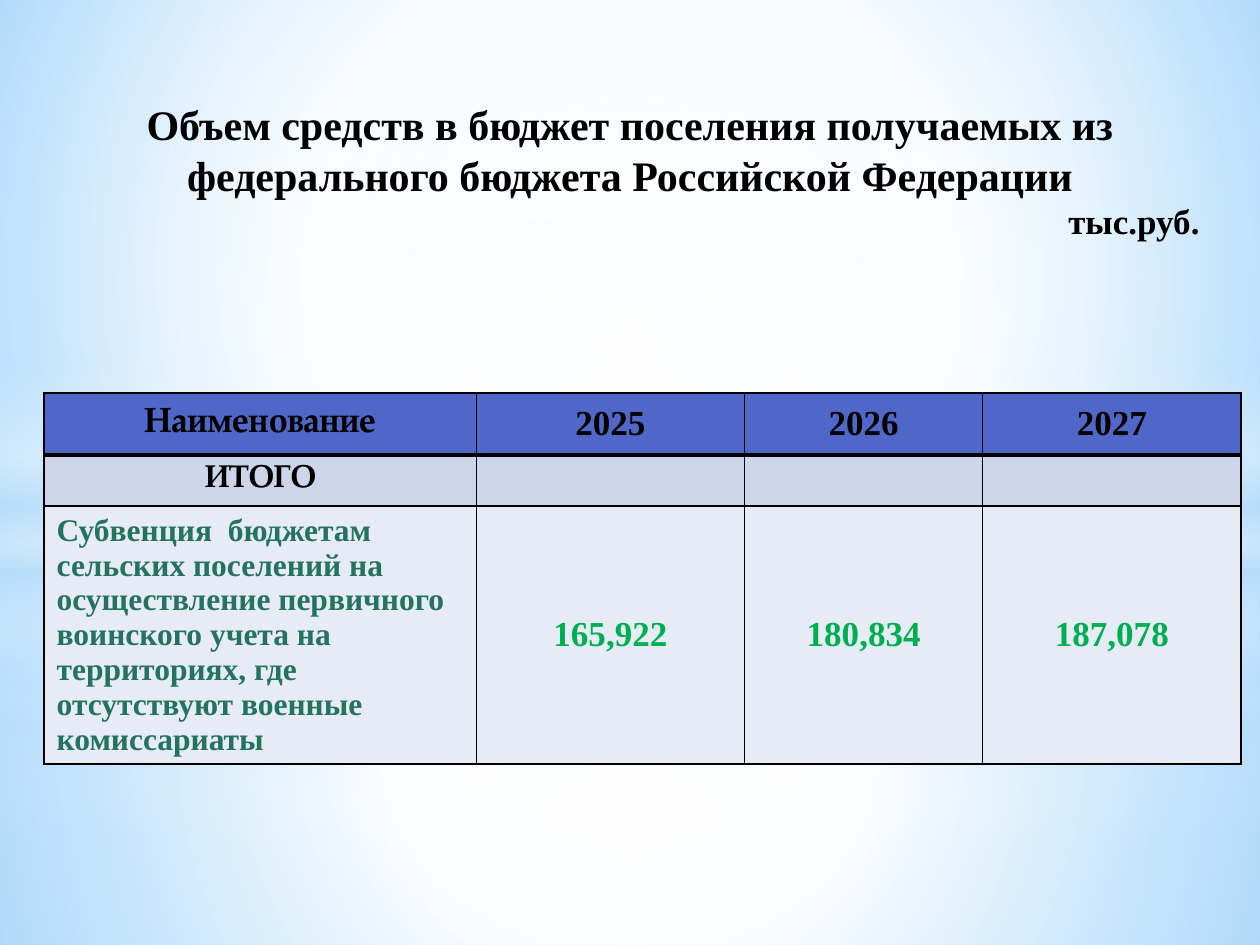
from dataclasses import dataclass

from lxml import etree
from pptx import Presentation
from pptx.dml.color import RGBColor
from pptx.enum import shapes, text
from pptx.oxml import ns
from pptx.util import Inches, Pt


@dataclass(frozen=True)
class Theme:
    serif: str = "Times New Roman"
    label: str = "TeX Gyre Pagella"
    ink: str = "000000"
    white: str = "FFFFFF"
    sky: str = "B4DCFA"
    bg_inner: str = "9ED5FF"
    bg_outer: str = "5BB9FF"
    header: str = "4E67C8"
    total: str = "CCD5EA"
    body: str = "E7EBF5"
    item: str = "23735D"
    amount: str = "00B050"
    title_size: int = 24
    large: int = 20
    normal: int = 18


THEME = Theme()
CENTER = text.PP_ALIGN.CENTER


def add_child(parent, tag, **attributes):
    child = etree.SubElement(parent, ns.qn(tag))
    for name, value in attributes.items():
        child.set(name, str(value))
    return child


def paint_gradient(holder, stops, focus=None):
    """Replace the solid fill in holder; stops are (percent, colour, opacity).

    focus gives the left, top, right and bottom insets of a circular gradient;
    without it the gradient runs downwards.
    """
    solid = holder.find(ns.qn("a:solidFill"))
    gradient = etree.Element(ns.qn("a:gradFill"), rotWithShape="1")
    stop_list = add_child(gradient, "a:gsLst")
    for position, colour, opacity in stops:
        stop = add_child(stop_list, "a:gs", pos=position * 1000)
        tint = add_child(stop, "a:srgbClr", val=colour)
        if opacity < 100:
            add_child(tint, "a:alpha", val=opacity * 1000)
    if focus:
        circle = add_child(gradient, "a:path", path="circle")
        insets = {side: inset * 1000 for side, inset in zip("ltrb", focus)}
        add_child(circle, "a:fillToRect", **insets)
    else:
        add_child(gradient, "a:lin", ang=90 * 60000, scaled=0)
    holder.replace(solid, gradient)


def add_wash(page, box, stops, focus=(50, 50, 50, 50), kind=shapes.MSO_SHAPE.RECTANGLE):
    wash = page.shapes.add_shape(kind, *map(Inches, box))
    wash.shadow.inherit = False
    wash.line.fill.background()
    wash.fill.solid()
    paint_gradient(wash._element.spPr, stops, focus)


def add_horizon(page, horizon, band_top, extra, glow_end):
    """Draw ground, sky, a misty band and a glow; extra adds to the opacity."""
    white, sky = THEME.white, THEME.sky
    add_wash(page, (0, horizon, 10, 7.5 - horizon),
             [(0, white, 91 + extra), (37, white, 76 + extra), (100, sky, 79 + extra)])
    add_wash(page, (0, 0, 10, horizon),
             [(0, white, 89 + extra), (48, white, 62 + extra), (100, sky, 79 + extra)])
    add_wash(page, (0, band_top, 10, 2.5),
             [(0, white, 0), (29, white, 30), (45, sky, 40),
              (55, white, 26), (65, sky, 60), (100, white, 0)], focus=None)
    add_wash(page, (0, 1.75, 10, 5.58), [(0, white, 100), (glow_end, white, 0)],
             kind=shapes.MSO_SHAPE.OVAL)


def add_backdrop(page):
    page.background.fill.solid()
    paint_gradient(page._element.cSld.bg.bgPr,
                   [(0, THEME.bg_inner, 100), (60, THEME.white, 100), (100, THEME.bg_outer, 100)],
                   focus=(20, 10, 20, 60))
    add_horizon(page, 5.58, 4.12, extra=0, glow_end=56)
    add_horizon(page, 4.23, 2.9, extra=1, glow_end=54)


def write(para, words, size=THEME.large, font=THEME.serif, colour=THEME.ink, align=CENTER):
    para.alignment = align
    span = para.add_run()
    span.text = words
    span.font.size = Pt(size)
    span.font.name = font
    span.font.bold = True
    span.font.color.rgb = RGBColor.from_string(colour)


def add_title(page, box):
    frame = page.shapes.add_textbox(*map(Inches, box)).text_frame
    frame.word_wrap = True
    frame.vertical_anchor = text.MSO_ANCHOR.MIDDLE
    write(frame.paragraphs[0],
          "Объем средств в бюджет поселения получаемых из федерального бюджета Российской Федерации",
          size=THEME.title_size)
    unit = frame.add_paragraph()
    write(unit, "тыс.руб.")
    unit._p.get_or_add_pPr().set("marL", str(Inches(8)))


def set_borders(cell, top, bottom):
    properties = cell._tc.get_or_add_tcPr()
    widths = {"a:lnL": 1, "a:lnR": 1, "a:lnT": top, "a:lnB": bottom}
    for index, (tag, width) in enumerate(widths.items()):
        line = etree.Element(ns.qn(tag), w=str(Pt(width)))
        add_child(add_child(line, "a:solidFill"), "a:srgbClr", val=THEME.ink)
        properties.insert(index, line)


def add_budget_table(page, box):
    label = dict(font=THEME.label)
    item = dict(size=THEME.normal, colour=THEME.item, align=text.PP_ALIGN.LEFT)
    amount = dict(colour=THEME.amount)
    # fill, height, top and bottom border, words, first-cell format, other-cell format
    rows = [
        (THEME.header, 0.49, 1, 3, ["Наименование", "2025", "2026", "2027"], label, {}),
        (THEME.total, 0.4, 3, 1, ["ИТОГО", "", "", ""], label | {"size": THEME.normal}, {}),
        (THEME.body, 2.05, 1, 1,
         ["Субвенция  бюджетам сельских поселений на осуществление первичного воинского "
          "учета на территориях, где отсутствуют военные комиссариаты",
          "165,922", "180,834", "187,078"], item, amount),
    ]
    widths = [3.43, 2.13, 1.89, 2.05]
    table = page.shapes.add_table(len(rows), len(widths), *map(Inches, box)).table
    for column, width in zip(table.columns, widths):
        column.width = Inches(width)
    for row, (fill, height, top, bottom, words, first, others) in zip(table.rows, rows):
        row.height = Inches(height)
        for index, (cell, content) in enumerate(zip(row.cells, words)):
            cell.vertical_anchor = text.MSO_ANCHOR.MIDDLE
            cell.fill.solid()
            cell.fill.fore_color.rgb = RGBColor.from_string(fill)
            set_borders(cell, top, bottom)
            if content:
                write(cell.text_frame.paragraphs[0], content, **(others if index else first))


def main():
    deck = Presentation()
    deck.slide_width, deck.slide_height = Inches(10), Inches(7.5)
    page = deck.slides.add_slide(deck.slide_layouts[6])
    add_backdrop(page)
    add_budget_table(page, (0.35, 3.12, 9.5, 2.94))
    add_title(page, (0, 0.6, 10, 1.5))
    deck.save("out.pptx")


if __name__ == "__main__":
    main()
